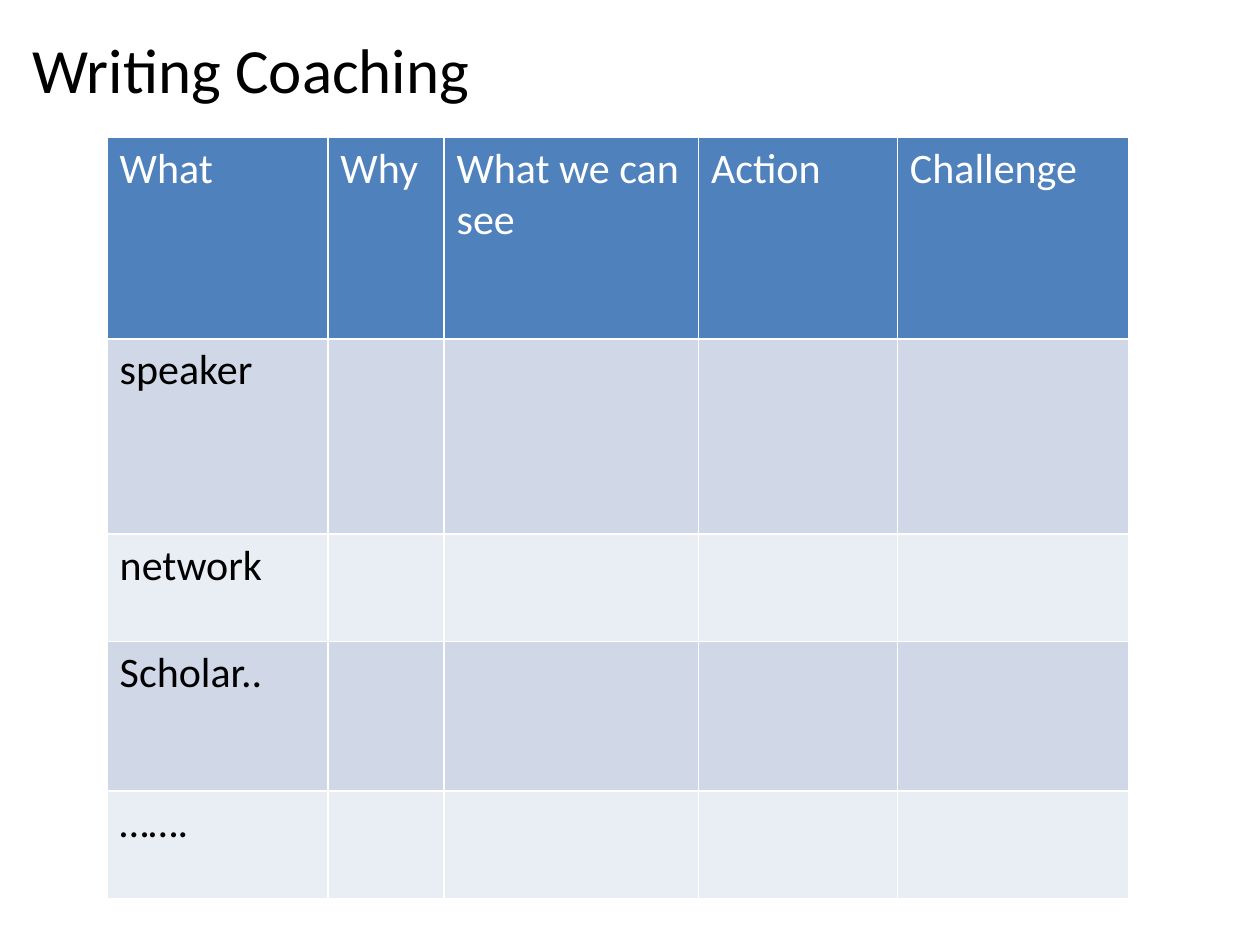
from pptx import Presentation
from pptx.dml.color import RGBColor
from pptx.enum.text import MSO_ANCHOR
from pptx.util import Cm, Pt

FONT = "Calibri"
HEADER_FILL = "4F81BD"
BAND_FILLS = ["D0D8E8", "E9EDF4"]
COL_WIDTHS = [4.45, 2.34, 5.13, 4.01, 4.67]
ROW_HEIGHTS = [4.06, 3.94, 2.16, 3.02, 2.16]
HEADINGS = ["What", "Why", "What we can see", "Action", "Challenge"]
TOPICS = ["speaker", "network", "Scholar..", "……."]


def rgb(color):
    return RGBColor.from_string(color)


def write(tf, text, size, color):
    tf.text = text
    for r in tf.paragraphs[0].runs:
        r.font.name = FONT
        r.font.size = Pt(size)
        r.font.bold = False
        r.font.color.rgb = rgb(color)


def add_title(s, left, top, width, height):
    sp = s.shapes.add_textbox(Cm(left), Cm(top), Cm(width), Cm(height))
    tf = sp.text_frame
    tf.word_wrap = True
    tf.vertical_anchor = MSO_ANCHOR.MIDDLE
    write(tf, "Writing Coaching", 36, "000000")


def add_coaching_table(s, left, top):
    rows = [HEADINGS] + [[topic] + [""] * (len(HEADINGS) - 1) for topic in TOPICS]
    table = s.shapes.add_table(
        len(rows), len(HEADINGS), Cm(left), Cm(top),
        Cm(sum(COL_WIDTHS)), Cm(sum(ROW_HEIGHTS)),
    ).table
    for col, width in zip(table.columns, COL_WIDTHS):
        col.width = Cm(width)
    for i, (row, height, texts) in enumerate(zip(table.rows, ROW_HEIGHTS, rows)):
        row.height = Cm(height)
        fill = BAND_FILLS[(i - 1) % 2] if i else HEADER_FILL
        color = "000000" if i else "FFFFFF"
        for cell, text in zip(row.cells, texts):
            cell.fill.solid()
            cell.fill.fore_color.rgb = rgb(fill)
            if text:
                write(cell.text_frame, text, 24, color)


def main():
    prs = Presentation()
    prs.slide_width, prs.slide_height = Cm(25.4), Cm(19.05)
    s = prs.slides.add_slide(prs.slide_layouts[6])
    add_title(s, 0.41, 0.38, 15.6, 1.98)
    add_coaching_table(s, 2.16, 2.77)
    prs.save("out.pptx")


if __name__ == "__main__":
    main()
